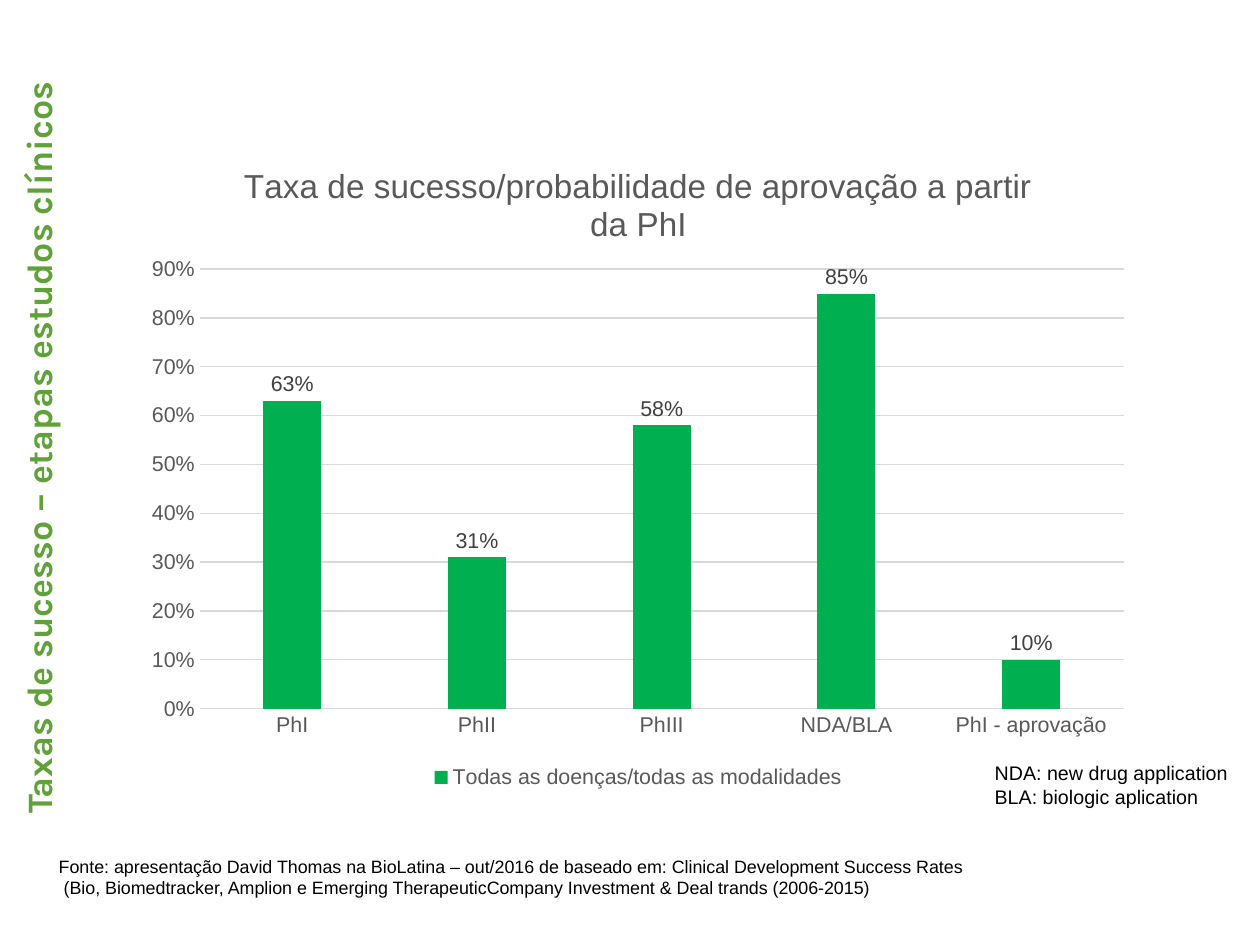
"""Build the slide on clinical trial success rates."""
from dataclasses import dataclass

from lxml.etree import SubElement
from pptx import Presentation
from pptx.chart.data import CategoryChartData
from pptx.dml.color import RGBColor as RGB
from pptx.enum.chart import XL_CHART_TYPE as CT, XL_LABEL_POSITION as LP
from pptx.enum.chart import XL_LEGEND_POSITION as LEG, XL_TICK_MARK as TICK
from pptx.enum.text import MSO_ANCHOR as ANCHOR, MSO_AUTO_SIZE as FIT, PP_ALIGN as AL
from pptx.oxml.ns import qn
from pptx.util import Pt


@dataclass(frozen=True)
class Theme:
    """Colours, fonts and type sizes."""
    font: str = "Arial"
    title_font: str = "Karla"
    title: str = "60A238"
    bar: str = "00B050"
    text: str = "000000"
    muted: str = "595959"
    label: str = "404040"
    grid: str = "D9D9D9"
    title_size: float = 20
    chart_title_size: float = 18.6
    chart_size: float = 12
    note_size: float = 11
    source_size: float = 10


T = Theme()
EMU_PER_PX = 7112


def px(n):
    """Turn pixels into EMU."""
    return n * EMU_PER_PX


def write(target, text, size, color, font=T.font, bold=False, wrap=None, indents=()):
    """Set formatted text in a text frame, or format a font when text is None."""
    fonts = [target]
    if text is not None:
        target.text = text
        fonts = [p.font for p in target.paragraphs]
        for p, indent in zip(target.paragraphs, indents):
            p._p.get_or_add_pPr().set("marL", str(px(indent)))
    if wrap is not None:
        target.word_wrap = wrap
        target.auto_size = FIT.SHAPE_TO_FIT_TEXT
        target.vertical_anchor = ANCHOR.TOP
        for p in target.paragraphs:
            p.alignment = AL.LEFT
    for f in fonts:
        f.name, f.size, f.bold = font, Pt(size), bold
        f.color.rgb = RGB.from_string(color)


prs = Presentation()
prs.slide_width, prs.slide_height = px(1260), px(945)
s = prs.slides.add_slide(prs.slide_layouts[5])

data = CategoryChartData(number_format="0%")
data.categories = ["PhI", "PhII", "PhIII", "NDA/BLA", "PhI - aprovação"]
data.add_series("Todas as doenças/todas as modalidades", [0.63, 0.31, 0.58, 0.85, 0.1])
chart = s.shapes.add_chart(CT.COLUMN_CLUSTERED, px(132), px(138), px(1013), px(656), data).chart
write(chart.font, None, T.chart_size, T.muted)
chart.has_title = True
write(chart.chart_title.text_frame, "Taxa de sucesso/probabilidade de aprovação a partir da PhI",
      T.chart_title_size, T.muted)
chart.chart_title.include_in_layout = False
chart.has_legend = True
chart.legend.position = LEG.BOTTOM
chart.legend.include_in_layout = False
write(chart.legend.font, None, T.chart_size, T.muted)

for axis in (chart.category_axis, chart.value_axis):
    axis.major_tick_mark = axis.minor_tick_mark = TICK.NONE
    write(axis.tick_labels.font, None, T.chart_size, T.muted)
values = chart.value_axis
values.minimum_scale, values.maximum_scale, values.major_unit = 0, 0.9, 0.1
values.tick_labels.number_format = "0%"
values.tick_labels.number_format_is_linked = False
values.format.line.fill.background()
for line in (chart.category_axis.format.line, values.major_gridlines.format.line):
    line.color.rgb = RGB.from_string(T.grid)
    line.width = Pt(0.75)

plot = chart.plots[0]
plot.gap_width, plot.overlap, plot.vary_by_categories = 219, -27, False
fill = plot.series[0].format.fill
fill.solid()
fill.fore_color.rgb = RGB.from_string(T.bar)
plot.has_data_labels = True
labels = plot.data_labels
labels.show_value = True
labels.number_format, labels.number_format_is_linked = "0%", False
labels.position = LP.OUTSIDE_END
write(labels.font, None, T.chart_size, T.label)

area = chart._chartSpace.chart.plotArea
for old in area.findall(qn("c:layout")):
    area.remove(old)
layout = SubElement(area, qn("c:layout"))
area.insert(0, layout)
manual = SubElement(layout, qn("c:manualLayout"))
for tag, val in (("layoutTarget", "inner"), ("xMode", "edge"), ("yMode", "edge"),
                 ("x", "0.067"), ("y", "0.2"), ("w", "0.912"), ("h", "0.67")):
    SubElement(manual, qn(f"c:{tag}")).set("val", val)

notes = [
    ((46, 849, 936, 57), T.source_size, (0, 5),
     "Fonte: apresentação David Thomas na BioLatina – out/2016 de baseado em: "
     "Clinical Development Success Rates\n"
     "(Bio, Biomedtracker, Amplion e Emerging TherapeuticCompany Investment & Deal trands (2006-2015)"),
    ((982, 755, 261, 60), T.note_size, (),
     "NDA: new drug application\nBLA: biologic aplication"),
]
for box, size, indents, text in notes:
    tf = s.shapes.add_textbox(*map(px, box)).text_frame
    write(tf, text, size, T.text, wrap=False, indents=indents)

title = s.shapes.title
title.left, title.top, title.width, title.height = map(px, (-320, 397, 760, 99))
title.rotation = 270
write(title.text_frame, "Taxas de sucesso – etapas estudos clínicos", T.title_size, T.title,
      font=T.title_font, bold=True, wrap=True)

prs.save("out.pptx")
